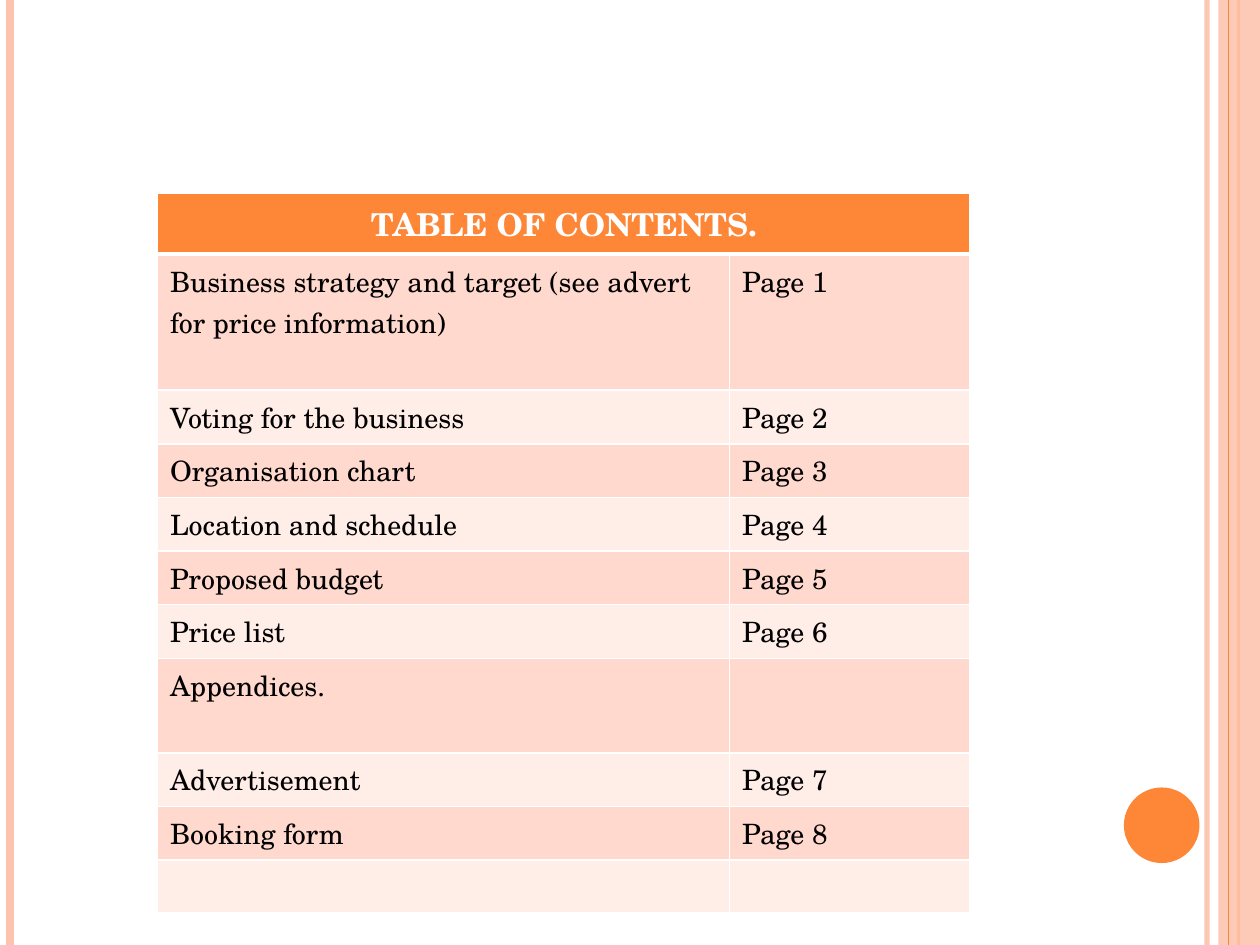
from lxml import etree
from pptx import Presentation
from pptx import util as u
from pptx.dml.color import RGBColor
from pptx.enum import shapes, text
from pptx.oxml.ns import qn

ORANGE, PEACH, WHITE = "FE8637", "FEC3AE", "FFFFFF"
BANDS = ["FFD9CE", "FFEDE8"]
FONT = "TeX Gyre Schola"


def paint(fill, color, alpha=100):
    """Give a fill a solid colour, with its opacity in percent."""
    fill.solid()
    fill.fore_color.rgb = RGBColor.from_string(color)
    if alpha < 100:
        clr = fill._xPr.find(".//" + qn("a:srgbClr"))
        etree.SubElement(clr, qn("a:alpha"), val=str(alpha * 1000))


def set_borders(cell, top, bottom):
    """Draw white cell borders; widths are in points."""
    tcPr = cell._tc.get_or_add_tcPr()
    widths = {"lnL": 1, "lnR": 1, "lnT": top, "lnB": bottom}
    for i, (tag, width) in enumerate(widths.items()):
        ln = etree.Element(qn("a:" + tag), w=str(u.Pt(width)))
        fill = etree.SubElement(ln, qn("a:solidFill"))
        etree.SubElement(fill, qn("a:srgbClr"), val=WHITE)
        tcPr.insert(i, ln)


prs = Presentation()
prs.slide_width, prs.slide_height = u.Inches(10), u.Inches(7.5)
s = prs.slides.add_slide(prs.slide_layouts[6])

# Side stripes and page-number disc, back to front
decorations = [
    ("line", 9.58, PEACH, 3, 93),
    ("line", 0.08, PEACH, 4.5, 100),
    ("line", 9.83, ORANGE, 1.5, 100),
    ("rect", (9.67, 0, 0.33, 7.5), PEACH, 0, 87),
    ("line", 9.75, ORANGE, 0.75, 100),
    ("oval", (8.92, 6.25, 0.6, 0.6), ORANGE, 0, 100),
]
presets = {"rect": shapes.MSO_SHAPE.RECTANGLE, "oval": shapes.MSO_SHAPE.OVAL}
for kind, place, color, width, alpha in decorations:
    if kind == "line":
        x = u.Inches(place)
        sp = s.shapes.add_connector(shapes.MSO_CONNECTOR.STRAIGHT, x, 0, x, prs.slide_height)
        sp.line.width = u.Pt(width)
        paint(sp.line.fill, color, alpha)
        etree.SubElement(sp._element.spPr, qn("a:effectLst"))
    else:
        sp = s.shapes.add_shape(presets[kind], *map(u.Inches, place))
        sp.shadow.inherit = False
        sp.line.fill.background()
        paint(sp.fill, color, alpha)

# Contents table: entry, page, row height
rows = [
    ("TABLE OF CONTENTS.", "", 0.48),
    ("Business strategy and target (see advert for price information)", "Page 1", 1.08),
    ("Voting for the business", "Page 2", 0.42),
    ("Organisation chart", "Page 3", 0.42),
    ("Location and schedule", "Page 4", 0.42),
    ("Proposed budget", "Page 5", 0.42),
    ("Price list", "Page 6", 0.42),
    ("Appendices.", "", 0.75),
    ("Advertisement", "Page 7", 0.42),
    ("Booking form", "Page 8", 0.42),
    ("", "", 0.42),
]
height = u.Inches(sum(row[2] for row in rows))
table = s.shapes.add_table(len(rows), 2, u.Inches(1.25), u.Inches(1.53),
                           u.Inches(6.45), height).table
for col, width in zip(table.columns, (4.54, 1.91)):
    col.width = u.Inches(width)
table.cell(0, 0).merge(table.cell(0, 1))

for i, (entry, page, row_height) in enumerate(rows):
    table.rows[i].height = u.Inches(row_height)
    header = i == 0
    for j, words in enumerate((entry, page)):
        cell = table.cell(i, j)
        paint(cell.fill, ORANGE if header else BANDS[(i - 1) % 2])
        set_borders(cell, 3 if i == 1 else 1, 3 if header else 1)
        if not words:
            continue
        p = cell.text_frame.paragraphs[0]
        p.text = words
        if header:
            p.alignment = text.PP_ALIGN.CENTER
        font = p.runs[0].font
        font.name, font.bold = FONT, header
        font.size = u.Pt(18 if header else 16)
        paint(font.fill, WHITE if header else "000000")

prs.save("out.pptx")
